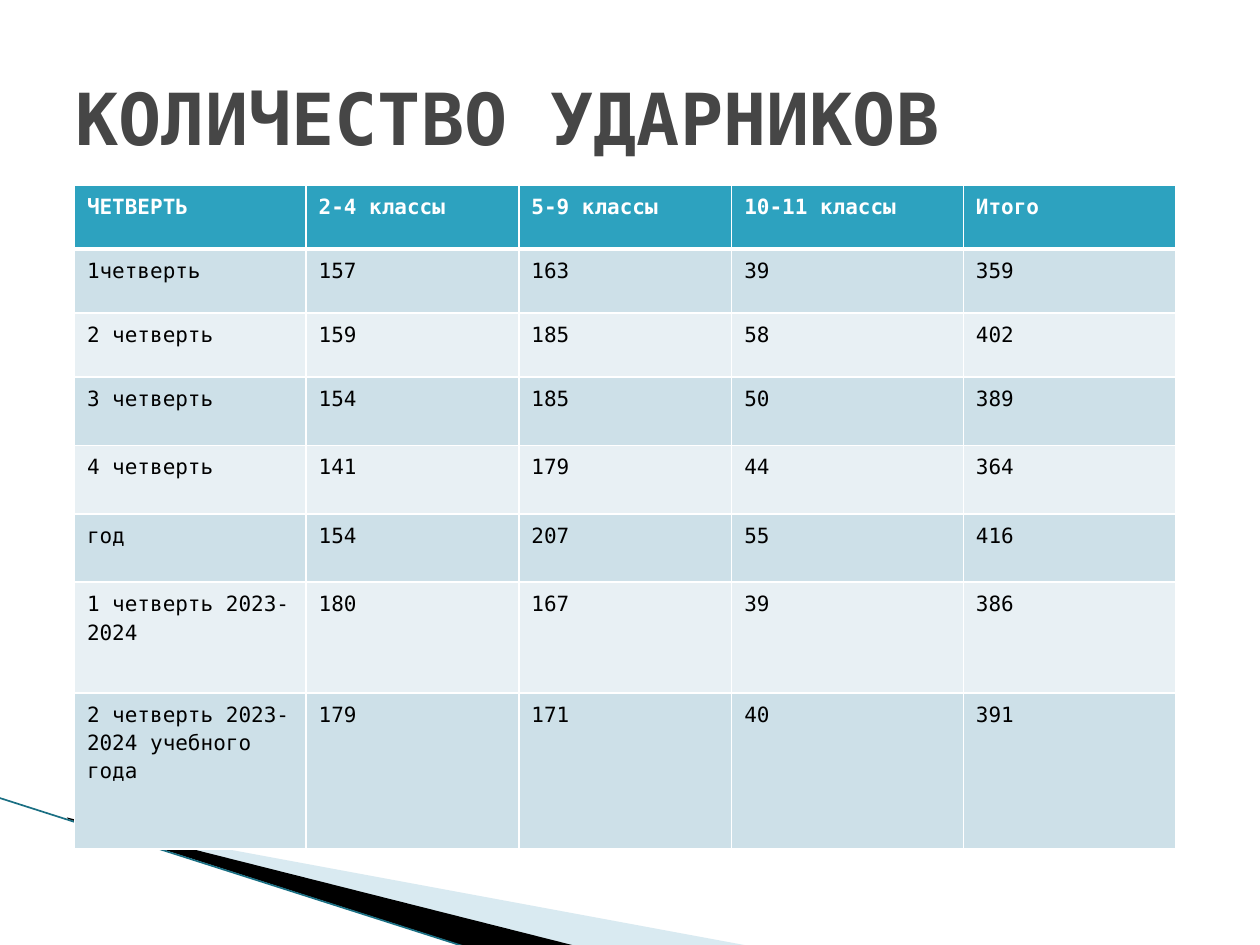
from lxml.etree import SubElement
from pptx import Presentation
from pptx.dml.color import RGBColor
from pptx.enum.text import MSO_ANCHOR, PP_ALIGN
from pptx.enum.shapes import MSO_CONNECTOR
from pptx.oxml.ns import qn
from pptx.util import Cm, Pt

FONT = "DejaVu Sans Mono"
COLORS = {
    "title": "464646",
    "header": "2DA2BF",
    "odd_row": "CDE0E8",
    "even_row": "E8F0F4",
    "white": "FFFFFF",
    "black": "000000",
    "pale_wedge": "A0CBDC",
    "edge": "1A6F83",
}
COLUMN_WIDTHS = [4.67, 4.29, 4.29, 4.67, 4.29]
ROW_HEIGHTS = [1.29] * 3 + [1.38] * 3 + [2.23, 3.15]
RESULTS = [
    ["ЧЕТВЕРТЬ", "2-4 классы", "5-9 классы", "10-11 классы", "Итого"],
    ["1четверть", "157", "163", "39", "359"],
    ["2 четверть", "159", "185", "58", "402"],
    ["3 четверть", "154", "185", "50", "389"],
    ["4 четверть", "141", "179", "44", "364"],
    ["год", "154", "207", "55", "416"],
    ["1 четверть 2023-2024", "180", "167", "39", "386"],
    ["2 четверть 2023-2024 учебного года", "179", "171", "40", "391"],
]


def rgb(name):
    return RGBColor.from_string(COLORS[name])


def style_font(font, size, color, bold):
    font.name = FONT
    font.size = Pt(size)
    font.bold = bold
    font.color.rgb = rgb(color)


def add_wedge(slide, points, color, opacity=100):
    corners = [(Cm(x), Cm(y)) for x, y in points]
    builder = slide.shapes.build_freeform(*corners[0])
    builder.add_line_segments(corners[1:], close=True)
    wedge = builder.convert_to_shape()
    wedge.shadow.inherit = False
    wedge.line.fill.background()
    wedge.fill.solid()
    wedge.fill.fore_color.rgb = rgb(color)
    if opacity < 100:
        tint = wedge.fill._xPr.find(qn("a:solidFill"))[0]
        SubElement(tint, qn("a:alpha"), val=str(opacity * 1000))


def add_edge(slide, start, end):
    ends = [Cm(value) for value in (*start, *end)]
    edge = slide.shapes.add_connector(MSO_CONNECTOR.STRAIGHT, *ends)
    edge.line.color.rgb = rgb("edge")
    edge.line.width = Pt(0.95)
    SubElement(edge._element.spPr, qn("a:effectLst"))


def add_border(cell, side, width):
    border = SubElement(cell._tc.get_or_add_tcPr(), qn(f"a:ln{side}"), w=str(Pt(width)))
    paint = SubElement(border, qn("a:solidFill"))
    SubElement(paint, qn("a:srgbClr"), val=COLORS["white"])


def fill_cell(cell, text, row):
    header = row == 0
    for side in "LRTB":
        heavy = (header and side == "B") or (row == 1 and side == "T")
        add_border(cell, side, 3 if heavy else 1)
    cell.fill.solid()
    cell.fill.fore_color.rgb = rgb("header" if header else "odd_row" if row % 2 else "even_row")
    cell.text = text
    paragraph = cell.text_frame.paragraphs[0]
    paragraph.line_spacing = 1.15
    paragraph.space_after = Pt(10)
    style_font(paragraph.font, 12, "white" if header else "black", header)


def add_results(slide):
    table = slide.shapes.add_table(
        len(RESULTS), len(COLUMN_WIDTHS), Cm(1.5), Cm(3.73),
        Cm(sum(COLUMN_WIDTHS)), Cm(sum(ROW_HEIGHTS)),
    ).table
    for column, width in zip(table.columns, COLUMN_WIDTHS):
        column.width = Cm(width)
    for row, height in enumerate(ROW_HEIGHTS):
        table.rows[row].height = Cm(height)
        for column, text in enumerate(RESULTS[row]):
            fill_cell(table.cell(row, column), text, row)


def set_title(slide, text):
    title = slide.shapes.title
    title.left, title.top, title.width, title.height = Cm(1.27), Cm(0.76), Cm(22.86), Cm(3.18)
    title.text_frame.text = text
    title.text_frame.vertical_anchor = MSO_ANCHOR.MIDDLE
    heading = title.text_frame.paragraphs[0]
    heading.alignment = PP_ALIGN.LEFT
    style_font(heading.font, 41, "title", True)


def main():
    presentation = Presentation()
    presentation.slide_width, presentation.slide_height = Cm(25.4), Cm(19.05)
    slide = presentation.slides.add_slide(presentation.slide_layouts[5])
    set_title(slide, "КОЛИЧЕСТВО УДАРНИКОВ")
    add_wedge(slide, [(1.4, 16.53), (15.11, 19.07), (11.58, 19.07), (1.4, 16.51)], "pale_wedge", 40)
    add_wedge(slide, [(1.35, 16.48), (11.61, 19.07), (9.45, 19.1), (1.37, 16.51)], "black")
    add_edge(slide, (-0.03, 16.08), (9.42, 19.1))
    add_results(slide)
    presentation.save("out.pptx")


if __name__ == "__main__":
    main()
